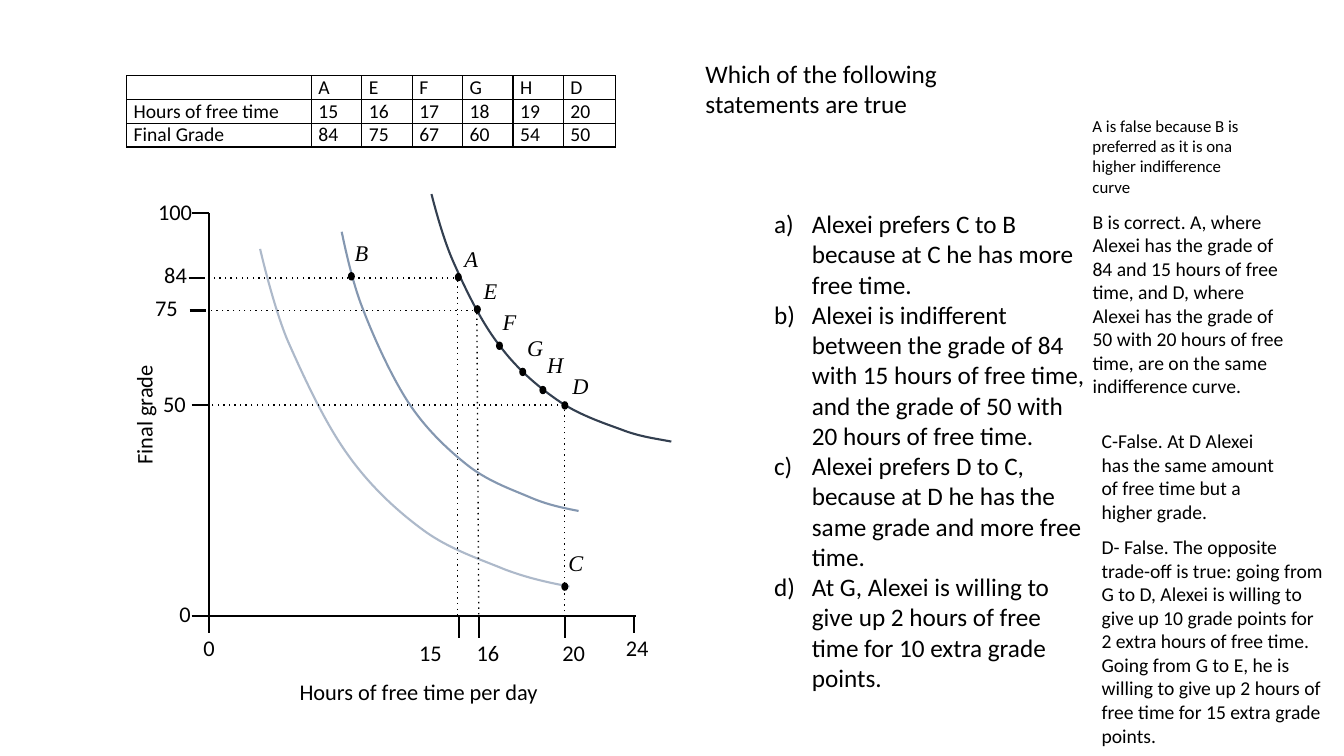
from lxml import etree
from pptx import Presentation
from pptx.dml.color import RGBColor
from pptx.enum.shapes import MSO_CONNECTOR, MSO_SHAPE
from pptx.enum.text import MSO_AUTO_SIZE, PP_ALIGN
from pptx.oxml.ns import qn
from pptx.util import Pt

STRAIGHT = MSO_CONNECTOR.STRAIGHT
OVAL = MSO_SHAPE.OVAL
GROW = MSO_AUTO_SIZE.SHAPE_TO_FIT_TEXT
LEFT, CENTER = PP_ALIGN.LEFT, PP_ALIGN.CENTER
SANS, SERIF = "Calibri", "Times New Roman"
COLORS = {"ink": "000000", "paper": "FFFFFF", "high": "333F50",
          "mid": "8497B0", "low": "ADB9CA"}

AXIS_X, AXIS_Y = 149, 440

GRADES = [
    ["", "A", "E", "F", "G", "H", "D"],
    ["Hours of free time", "15", "16", "17", "18", "19", "20"],
    ["Final Grade", "84", "75", "67", "60", "54", "50"],
]

CURVES = {
    "high": [(479.5, 315.4), (468, 313.2), (456.5, 311.8), (443.5, 306.7),
             (429.8, 301.7), (412.6, 295.9), (398.2, 285.8), (383.8, 275.8),
             (368.6, 262.8), (356.4, 246.2), (343.4, 229.7), (331.2, 203.8),
             (323.3, 185.8), (315.4, 167.8), (308.2, 138.6), (308.2, 138.6)],
    "mid": [(413.3, 365), (402.5, 362.9), (391, 360.7), (378, 355),
            (364.3, 349.2), (347.8, 343.4), (333.4, 331.9), (319, 320.4),
            (303.8, 306), (291.6, 287.3), (279.4, 268.6), (266.4, 239.8),
            (258.5, 218.9), (250.6, 198.7), (244.1, 165.6), (244.1, 165.6)],
    "low": [(406.8, 419), (392.4, 416.2), (378, 413.3), (360.7, 406.8),
            (343.4, 399.6), (321.1, 392.4), (302.4, 378.7), (283.7, 365),
            (264.2, 347), (248.4, 324.7), (231.8, 301.7), (216, 267.1),
            (205.2, 242.6), (195.1, 218.2), (185.8, 177.8), (185.8, 177.8)],
}

# name, dot centre, label corner
SPOTS = [
    ("A", 327.4, 198, 324.7, 171.4),
    ("B", 251, 197.4, 246.2, 167),
    ("C", 403.5, 419, 398.9, 388.8),
    ("D", 403.5, 289.6, 401.8, 262),
    ("E", 341, 221, 338.4, 194.4),
    ("F", 356.8, 247, 352, 216.7),
    ("G", 373.4, 265.7, 369.4, 235.4),
    ("H", 387.8, 278.6, 383.8, 247),
]

# text, tick height, tick left, label left, label top, label width
ROW_TICKS = [
    ("100", 152, 137.5, 105.8, 138.2, 40),
    ("84", 198.7, 134.8, 110.2, 182.9, 34),
    ("75", 221.8, 135.4, 103.7, 206.6, 36),
    ("50", 289.4, 136.8, 109.4, 275, 39),
    ("0", AXIS_Y, 136.8, 121, 424.8, 24),
]

# text, tick place, label left, label top, label width
COL_TICKS = [
    ("0", AXIS_X, 138.2, 449.3, 28),
    ("15", 327.6, 292.3, 452.9, 46),
    ("16", 342, 333.4, 452.9, 33),
    ("20", 403.9, 394.6, 452.9, 40),
    ("24", 452.9, 440, 449.3, 33),
]

GUIDES = [
    (328.3, 198.7, 147, 198.7), (326.9, 196.6, 326.9, 439.2),
    (342, 221.8, 151, 221.8), (340.6, 219.6, 342, 440.6),
    (402.5, 289.4, 148.3, 289.4), (403.2, 440.6, 403.2, 288),
]

CLAIMS = [
    "Alexei prefers C to B because at C he has more free time.",
    "Alexei is indifferent between the grade of 84 with 15 hours of free "
    "time, and the grade of 50 with 20 hours of free time.",
    "Alexei prefers D to C, because at D he has the same grade and more "
    "free time.",
    "At G, Alexei is willing to give up 2 hours of free time for 10 extra "
    "grade points.",
]

NOTES = [
    (773.3, 79.2, 127.4, 65.5, 12,
     "A is false because B is preferred as it is ona higher indifference "
     "curve"),
    (773.3, 146.2, 152.6, 143.3, 14,
     "B is correct. A, where Alexei has the grade of 84 and 15 hours of free "
     "time, and D, where Alexei has the grade of 50 with 20 hours of free "
     "time, are on the same indifference curve."),
    (779.8, 303.1, 139.7, 74.9, 14,
     "C-False. At D Alexei has the same amount of free time but a higher "
     "grade."),
    (779.8, 378.7, 175, 159.8, 14,
     "D- False. The opposite trade-off is true: going from G to D, Alexei is "
     "willing to give up 10 grade points for 2 extra hours of free time. "
     "Going from G to E, he is willing to give up 2 hours of free time for "
     "15 extra grade points."),
]


def tint(name):
    return RGBColor.from_string(COLORS[name])


def add_run(para, words, size, face=SANS):
    run = para.add_run()
    run.text = words
    run.font.size = Pt(size)
    run.font.name = face
    run.font.italic = face == SERIF
    run.font.color.rgb = tint("ink")


def add_text(shapes, x, y, wide, high, lines, size, face=SANS, align=LEFT):
    box = shapes.add_textbox(Pt(x), Pt(y), Pt(wide), Pt(high))
    frame = box.text_frame
    frame.word_wrap = True
    frame.auto_size = GROW
    for i, words in enumerate(lines):
        para = frame.add_paragraph() if i else frame.paragraphs[0]
        para.alignment = align
        add_run(para, words, size, face)
    return box


def add_line(shapes, x1, y1, x2, y2, width=1.5, dash=None):
    line = shapes.add_connector(STRAIGHT, Pt(x1), Pt(y1), Pt(x2), Pt(y2))
    line.line.color.rgb = tint("ink")
    line.line.width = Pt(width)
    props = line._element.spPr
    if dash:
        etree.SubElement(props.find(qn("a:ln")), qn("a:prstDash"), val=dash)
    etree.SubElement(props, qn("a:effectLst"))


def add_curve(shapes, points, color):
    spots = [(Pt(x), Pt(y)) for x, y in points]
    maker = shapes.build_freeform(*spots[0], scale=1.0)
    maker.add_line_segments(spots[1:], close=False)
    curve = maker.convert_to_shape()
    curve.shadow.inherit = False
    curve.fill.background()
    curve.line.color.rgb = tint(color)
    curve.line.width = Pt(1.5)
    route = curve._element.find(".//" + qn("a:path"))
    steps = route.findall(qn("a:lnTo"))
    for i in range(0, len(steps), 3):
        bend = etree.SubElement(route, qn("a:cubicBezTo"))
        for step in steps[i:i + 3]:
            bend.append(step[0])
            route.remove(step)


def add_dot(shapes, x, y):
    dot = shapes.add_shape(OVAL, Pt(x - 2.5), Pt(y - 3), Pt(5), Pt(6))
    dot.shadow.inherit = False
    dot.fill.solid()
    dot.fill.fore_color.rgb = tint("ink")
    dot.line.fill.background()


def fill_cell(cell, words):
    cell.margin_left = cell.margin_right = Pt(5)
    cell.margin_top = cell.margin_bottom = 0
    para = cell.text_frame.paragraphs[0]
    if words:
        add_run(para, words, 14)
    else:
        etree.SubElement(para._p, qn("a:endParaRPr"), sz="1400")
    props = cell._tc.get_or_add_tcPr()
    for side in ("lnL", "lnR", "lnT", "lnB"):
        edge = etree.SubElement(props, qn("a:" + side), w=str(Pt(1)))
        ink = etree.SubElement(edge, qn("a:solidFill"))
        etree.SubElement(ink, qn("a:srgbClr"), val=COLORS["ink"])
    cell.fill.solid()
    cell.fill.fore_color.rgb = tint("paper")


def add_grades(shapes):
    table = shapes.add_table(3, 7, Pt(90.5), Pt(54), Pt(349), Pt(51)).table
    table.first_row = table.horz_banding = False
    for col, wide in zip(table.columns, [132] + [36] * 5 + [37]):
        col.width = Pt(wide)
    for r, row in enumerate(GRADES):
        table.rows[r].height = Pt(17)
        for c, words in enumerate(row):
            fill_cell(table.cell(r, c), words)


def add_graph(shapes):
    add_line(shapes, AXIS_X, 152, AXIS_X, AXIS_Y)
    add_line(shapes, 454, AXIS_Y, AXIS_X, AXIS_Y)
    for words, y, start, x, top, wide in ROW_TICKS:
        add_line(shapes, start, y, start + 12, y)
        add_text(shapes, x, top, wide, 27, [words], 16)
    for words, place, x, top, wide in COL_TICKS:
        add_line(shapes, place, AXIS_Y, place, top + 3)
        add_text(shapes, x, top, wide, 27, [words], 16)
    for color, points in CURVES.items():
        add_curve(shapes, points, color)
    for ends in GUIDES:
        add_line(shapes, *ends, width=1, dash="dot")
    for name, x, y, left, top in SPOTS:
        add_dot(shapes, x, y)
        add_text(shapes, left, top, 31, 27, [name], 16, SERIF)
    add_text(shapes, 191.5, 481, 215, 27, ["Hours of free time per day"], 16,
             align=CENTER)
    side = add_text(shapes, -21, 284.4, 245, 24, ["Final grade"], 16,
                    align=CENTER)
    side.rotation = 270


def add_claims(shapes):
    box = add_text(shapes, 545.8, 145.4, 242, 356.4, CLAIMS, 18)
    for para in box.text_frame.paragraphs:
        props = para._p.get_or_add_pPr()
        props.set("marL", str(Pt(27)))
        props.set("indent", str(Pt(-27)))
        etree.SubElement(props, qn("a:buAutoNum"), type="alphaLcParenR")


def main():
    deck = Presentation()
    deck.slide_width, deck.slide_height = Pt(960), Pt(540)
    shapes = deck.slides.add_slide(deck.slide_layouts[6]).shapes
    add_graph(shapes.add_group_shape().shapes)
    add_grades(shapes)
    add_text(shapes, 496.8, 38.2, 242, 51,
             ["Which of the following statements are true"], 18)
    add_claims(shapes)
    for x, y, wide, high, size, words in NOTES:
        add_text(shapes, x, y, wide, high, [words], size)
    deck.save("out.pptx")


if __name__ == "__main__":
    main()
